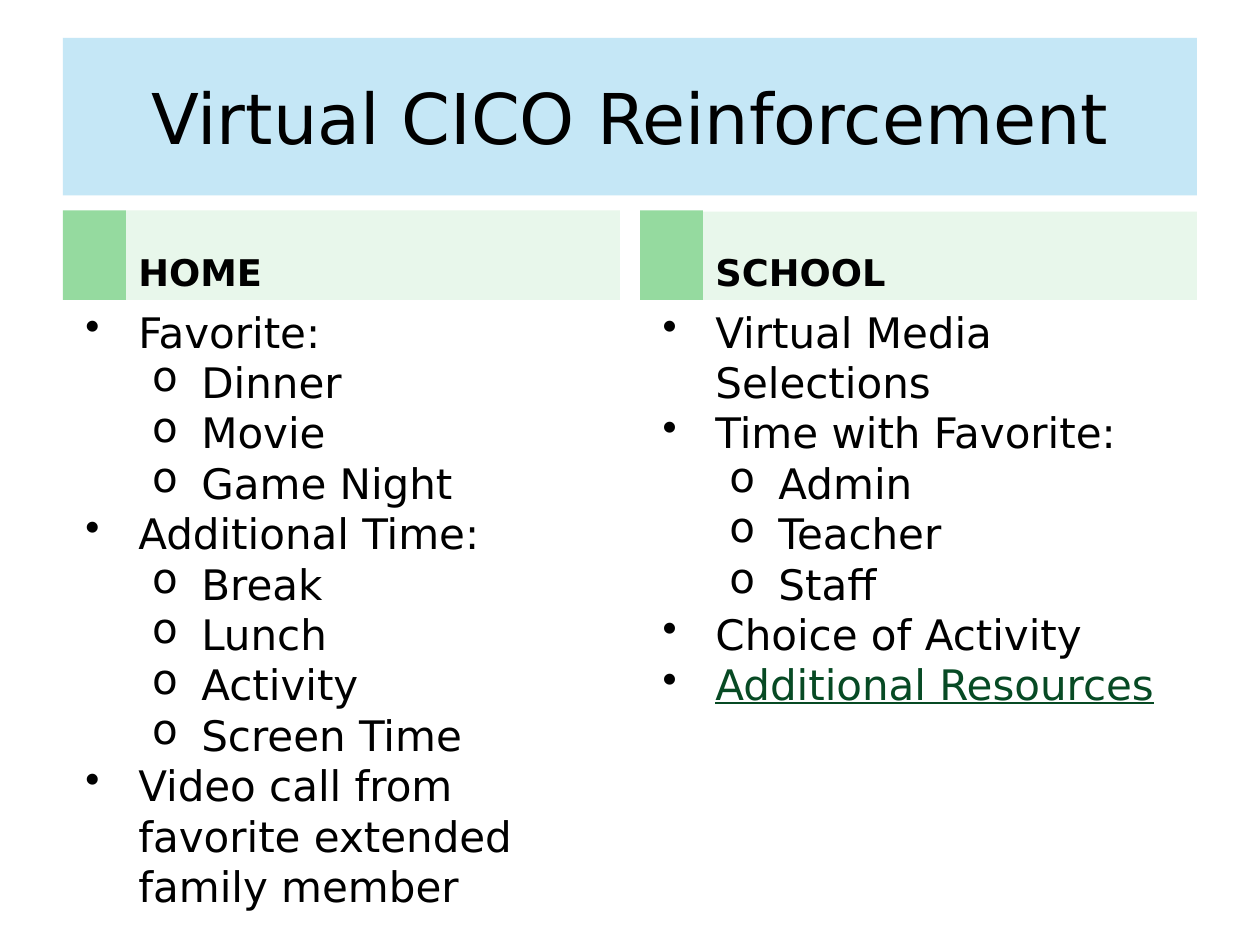
from lxml.etree import SubElement
from pptx import Presentation
from pptx.dml.color import RGBColor as Rgb
from pptx.enum.shapes import MSO_SHAPE as Shape
from pptx.enum.text import MSO_ANCHOR as Anchor, PP_ALIGN as Align
from pptx.oxml.ns import qn
from pptx.util import Inches, Pt

COLORS = {"title": "A9DCF2", "tab": "95DA9F", "header": "E8F7EB",
          "text": "000000", "link": "074A24"}
FONT = "DejaVu Sans"

# Grid: 20 columns of half an inch, 75 rows of a tenth
COL, ROW = Inches(0.5), Inches(0.1)
HEADER_TOP, LIST_TOP = 16.7, 23.8

# Left column, width of header, width of list, top of header, heading, items (level, text)
PANELS = [
    (1, 7.84, 9, HEADER_TOP, "HOME", [
        (0, "Favorite:"), (1, "Dinner"), (1, "Movie"), (1, "Game Night"),
        (0, "Additional Time:"), (1, "Break"), (1, "Lunch"), (1, "Activity"),
        (1, "Screen Time"),
        (0, "Video call from favorite extended family member")]),
    (10.16, 7.84, 8.84, HEADER_TOP + 0.1, "SCHOOL", [
        (0, "Virtual Media Selections"), (0, "Time with Favorite:"),
        (1, "Admin"), (1, "Teacher"), (1, "Staff"),
        (0, "Choice of Activity"), (0, "Additional Resources")]),
]
# Bullet, left margin and hanging indent for each level
LEVELS = [("•", 0.5, -0.42), ("o", 1, -0.39)]

deck = Presentation()
deck.slide_width, deck.slide_height = 20 * COL, 75 * ROW
page = deck.slides.add_slide(deck.slide_layouts[6])


def add_block(col, row, cols, rows, color):
    box = page.shapes.add_shape(Shape.RECTANGLE, int(col * COL), int(row * ROW),
                                int(cols * COL), int(rows * ROW))
    box.shadow.inherit = False
    box.fill.solid()
    box.fill.fore_color.rgb = Rgb.from_string(COLORS[color])
    box.line.fill.background()
    box.text_frame.word_wrap = True
    return box


def add_span(para, text, size, color="text", bold=False):
    span = para.add_run()
    span.text = text
    span.font.name, span.font.size, span.font.bold = FONT, Pt(size), bold
    span.font.color.rgb = Rgb.from_string(COLORS[color])
    return span


# Title band, partly transparent
title = add_block(1, 3, 18, 12.5, "title")
fill_color = title.fill._xPr.find(qn("a:solidFill"))[0]
SubElement(fill_color, qn("a:alpha"), val="67000")
title.text_frame.vertical_anchor = Anchor.MIDDLE
para = title.text_frame.paragraphs[0]
para.alignment = Align.CENTER
add_span(para, "Virtual CICO Reinforcement", 40)

for col, header_cols, list_cols, header_top, heading, items in PANELS:
    # Green tab and header
    add_block(col, HEADER_TOP, 1, LIST_TOP - HEADER_TOP, "tab")
    header = add_block(col + 1, header_top, header_cols, LIST_TOP - header_top, "header")
    header.text_frame.vertical_anchor = Anchor.BOTTOM
    para = header.text_frame.paragraphs[0]
    para.alignment = Align.LEFT
    add_span(para, heading, 21, bold=True)

    # Bulleted list
    box = page.shapes.add_textbox(int(col * COL), int(LIST_TOP * ROW),
                                  int(list_cols * COL), int(43.2 * ROW))
    frame = box.text_frame
    frame.word_wrap = True
    for index, (level, text) in enumerate(items):
        para = frame.add_paragraph() if index else frame.paragraphs[0]
        para.level = level
        bullet, margin, indent = LEVELS[level]
        props = para._p.get_or_add_pPr()
        props.set("marL", str(Inches(margin)))
        props.set("indent", str(Inches(indent)))
        bullet_color = SubElement(props, qn("a:buClr"))
        SubElement(bullet_color, qn("a:srgbClr"), val=COLORS["text"])
        SubElement(props, qn("a:buChar"), char=bullet)
        is_link = text == "Additional Resources"
        span = add_span(para, text, 24, "link" if is_link else "text")
        span.font.underline = is_link

deck.save("out.pptx")
